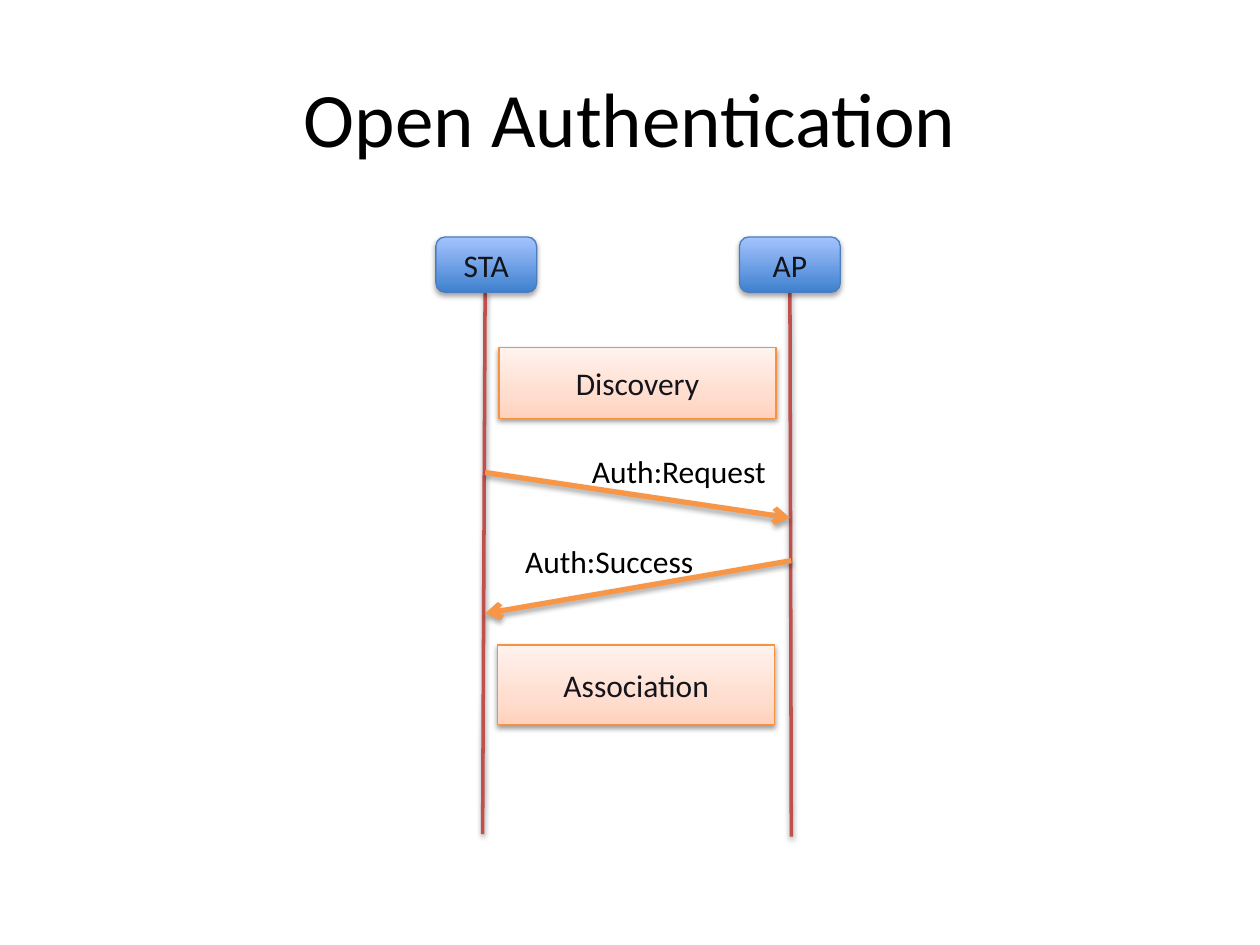
import copy

import pptx
import pptx.dml.color
import pptx.enum.shapes
import pptx.enum.text
import pptx.oxml
import pptx.oxml.ns
import pptx.util

Pt = pptx.util.Pt
qn = pptx.oxml.ns.qn
RGB = pptx.dml.color.RGBColor.from_string
SHAPE = pptx.enum.shapes.MSO_SHAPE
STRAIGHT = pptx.enum.shapes.MSO_CONNECTOR.STRAIGHT
CENTER = pptx.enum.text.PP_ALIGN.CENTER
MIDDLE = pptx.enum.text.MSO_ANCHOR.MIDDLE

THEME = {
    "font": "Calibri",
    "title_size": 44,
    "body_size": 18,
    "text": "000000",
    "box_text": "13141C",
    "lifeline": "C0504D",
    "message": "F79646",
    "station_line": "4B7EBC",
    "station_fill": [(0, "3F80CE"), (1, "A4C4FF")],
    "phase_line": "F69240",
    "phase_fill": [(0, "FFD2BD"), (0.35, "FFDED0"), (1, "FFF2ED")],
    "soft_shadow": (38, 1.6),  # opacity in percent, distance in points
    "deep_shadow": (35, 1.8),
}


def add_shadow(s, shadow):
    """Give a shape or connector, whose line is already set, a shadow below it."""
    opacity, distance = shadow
    spPr = s._element.spPr
    for old in spPr.findall(qn("a:effectLst")):
        spPr.remove(old)
    spPr.append(pptx.oxml.parse_xml(
        f'<a:effectLst {pptx.oxml.ns.nsdecls("a")}>'
        f'<a:outerShdw blurRad="{Pt(3.1)}" dist="{Pt(distance)}" dir="5400000" rotWithShape="0">'
        f'<a:srgbClr val="000000"><a:alpha val="{opacity * 1000}"/></a:srgbClr>'
        '</a:outerShdw></a:effectLst>'))


def set_text(tf, text, size, color):
    tf.text = text
    font = tf.paragraphs[0].runs[0].font
    font.name = THEME["font"]
    font.size = Pt(size)
    font.color.rgb = RGB(color)


prs = pptx.Presentation()
prs.slide_width, prs.slide_height = Pt(720), Pt(540)
slide = prs.slides.add_slide(prs.slide_layouts[5])

title = slide.shapes.title
title.left, title.top, title.width, title.height = Pt(36), Pt(21.6), Pt(648), Pt(90)
set_text(title.text_frame, "Open Authentication", THEME["title_size"], THEME["text"])
title.text_frame.vertical_anchor = MIDDLE
title.text_frame.paragraphs[0].alignment = CENTER

# Lifelines
for x1, x2, bottom in [(277.2, 275.8, 476.6), (451.4, 452.2, 478.1)]:
    line = slide.shapes.add_connector(STRAIGHT, Pt(x1), Pt(167), Pt(x2), Pt(bottom))
    line.line.color.rgb = RGB(THEME["lifeline"])
    line.line.width = Pt(2)
    add_shadow(line, THEME["soft_shadow"])

# Messages: each arrow is grouped with its label
messages = [
    ("Auth:Request", (277.2, 270, 451.4, 295.9), (331.2, 254.9, 117.4, 28.8)),
    ("Auth:Success", (452.2, 320.4, 277.2, 350.6), (293, 306, 115.2, 28.8)),
]
for text, ends, box in messages:
    group = slide.shapes.add_group_shape()
    arrow = group.shapes.add_connector(STRAIGHT, *map(Pt, ends))
    arrow.line.color.rgb = RGB(THEME["message"])
    arrow.line.width = Pt(3)
    tail = pptx.oxml.parse_xml(f'<a:tailEnd {pptx.oxml.ns.nsdecls("a")} type="arrow"/>')
    arrow.line._get_or_add_ln().append(tail)
    add_shadow(arrow, THEME["deep_shadow"])
    label = group.shapes.add_textbox(*map(Pt, box))
    set_text(label.text_frame, text, THEME["body_size"], THEME["text"])
    label.text_frame.word_wrap = False
    label.text_frame.auto_size = pptx.enum.text.MSO_AUTO_SIZE.SHAPE_TO_FIT_TEXT

# Stations and phases
boxes = [
    ("STA", "station", (249.1, 135.4, 57.6, 31.7)),
    ("AP", "station", (422.6, 135.4, 57.6, 31.7)),
    ("Association", "phase", (284.4, 368.6, 158.4, 45.4)),
    ("Discovery", "phase", (285.1, 198.7, 158.4, 40.3)),
]
looks = {
    "station": (SHAPE.ROUNDED_RECTANGLE, THEME["deep_shadow"]),
    "phase": (SHAPE.RECTANGLE, THEME["soft_shadow"]),
}
for text, kind, box in boxes:
    preset, shadow = looks[kind]
    sp = slide.shapes.add_shape(preset, *map(Pt, box))
    colors = THEME[f"{kind}_fill"]
    sp.fill.gradient()
    sp.fill.gradient_angle = 90
    stops = sp._element.spPr.find(".//" + qn("a:gsLst"))
    while len(stops) < len(colors):
        stops.append(copy.deepcopy(stops[0]))
    for stop, (position, color) in zip(sp.fill.gradient_stops, colors):
        stop.position = position
        stop.color.rgb = RGB(color)
    sp.line.color.rgb = RGB(THEME[f"{kind}_line"])
    sp.line.width = Pt(0.75)
    add_shadow(sp, shadow)
    set_text(sp.text_frame, text, THEME["body_size"], THEME["box_text"])
    sp.text_frame.vertical_anchor = MIDDLE
    sp.text_frame.paragraphs[0].alignment = CENTER

prs.save("out.pptx")
